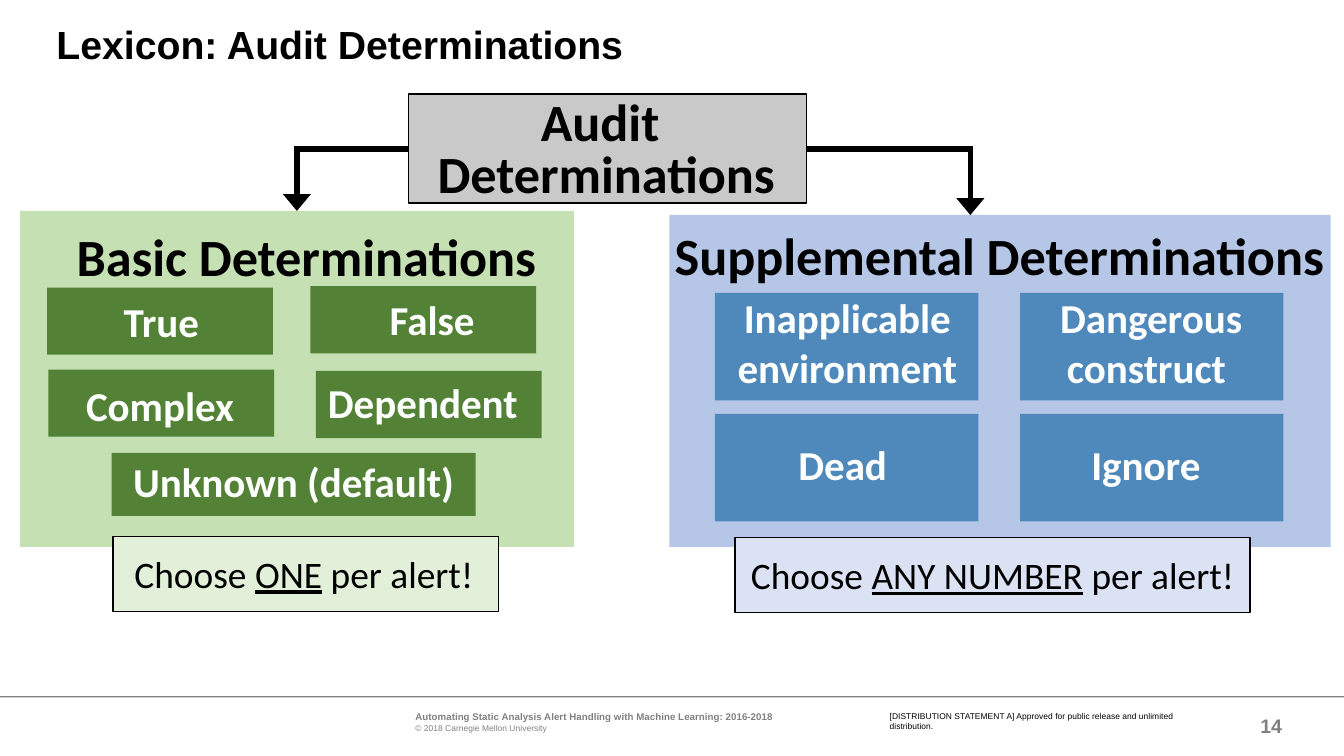
from lxml import etree
from pptx import Presentation
from pptx import util as u
from pptx.dml.color import RGBColor
from pptx.enum import shapes, text
from pptx.oxml.ns import qn

COLORS = {
    "black": "000000", "white": "FEFFFF", "gray": "808080", "root": "C9C9C9",
    "basic": "C5E0B3", "basic_tile": "538135", "basic_note": "E2EFD9",
    "extra": "B5C6E7", "extra_tile": "4F88BB", "extra_note": "DAE2F3",
}
LEFT = text.PP_ALIGN.LEFT
CENTER = text.PP_ALIGN.CENTER
HEADING = {"size": 28, "bold": True}
LABEL = {"size": 22, "bold": True, "color": "white"}
NOTE = {"size": 20}


def color(name):
    return RGBColor.from_string(COLORS[name])


def inches(box):
    return [u.Inches(value) for value in box]


def shift(box, left, top, width, height):
    return box[0] + left, box[1] + top, width, height


def style(font, size, color_name="black", name="Calibri", **values):
    values.update(size=u.Pt(size), name=name)
    for key, value in values.items():
        setattr(font, key, value)
    font.color.rgb = color(color_name)


def write(frame, paragraphs, look, **para_values):
    for index, spans in enumerate(paragraphs):
        para = frame.paragraphs[0] if index == 0 else frame.add_paragraph()
        for key, value in para_values.items():
            setattr(para, key, value)
        for words, changes in spans:
            values = {**look, **changes}
            color_name = values.pop("color", "black")
            for number, line in enumerate(words.split("\v")):
                if number:
                    para.add_line_break()
                span = para.add_run()
                span.text = line
                style(span.font, color_name=color_name, **values)


def plain(words):
    return [[(line, {})] for line in words.split("\n")]


def set_frame(frame, wrap=True, anchor=text.MSO_ANCHOR.TOP, grow=True):
    fit = text.MSO_AUTO_SIZE.SHAPE_TO_FIT_TEXT if grow else text.MSO_AUTO_SIZE.NONE
    values = {"margin_left": 0, "margin_top": 0, "margin_right": 0, "margin_bottom": 0,
              "word_wrap": wrap, "vertical_anchor": anchor, "auto_size": fit}
    for key, value in values.items():
        setattr(frame, key, value)


def add_text(page, box, paragraphs, look, wrap=True, **para_values):
    frame = page.shapes.add_textbox(*inches(box)).text_frame
    set_frame(frame, wrap)
    write(frame, paragraphs, look, **para_values)
    return frame


def add_block(page, box, fill, outlined=False):
    block = page.shapes.add_shape(shapes.MSO_SHAPE.RECTANGLE, *inches(box))
    block.shadow.inherit = False
    block.fill.solid()
    block.fill.fore_color.rgb = color(fill)
    if outlined:
        block.line.color.rgb = color("black")
        block.line.width = u.Pt(0.75)
    else:
        block.line.fill.background()


def add_arrow(page, *ends):
    arrow = page.shapes.add_connector(shapes.MSO_CONNECTOR.ELBOW, *inches(ends))
    arrow.line.color.rgb = color("black")
    arrow.line.width = u.Pt(3)
    properties = arrow._element.spPr
    properties.find(qn("a:prstGeom")).set("prst", "bentConnector2")
    outline = properties.find(qn("a:ln"))
    etree.SubElement(outline, qn("a:miter"), lim="800000")
    etree.SubElement(outline, qn("a:tailEnd"), type="triangle", w="lg", len="med")
    etree.SubElement(properties, qn("a:effectLst"))


def draw_title(page, box):
    title = page.shapes.title
    title.left, title.top, title.width, title.height = inches(box)
    set_frame(title.text_frame, grow=False)
    write(title.text_frame, plain("Lexicon: Audit Determinations"),
          {"size": 21, "bold": True, "name": "Arial"}, alignment=LEFT, line_spacing=0.9)


def draw_root(page, box):
    add_block(page, box, "root", outlined=True)
    add_text(page, shift(box, 0.17, 0.04, 2.6, 0.79), plain("Audit \vDeterminations"),
             HEADING, alignment=CENTER, line_spacing=u.Pt(28))


def draw_panel(page, box, theme, heading, heading_box, tiles, amount, note_box, note_text_box,
               note_alignment):
    add_block(page, box, theme)
    add_text(page, shift(box, *heading_box), plain(heading), HEADING, wrap=False)
    add_block(page, shift(box, *note_box), theme + "_note", outlined=True)
    spans = [("Choose ", {}), (amount, {"underline": True}), (" per alert!", {})]
    add_text(page, shift(box, *note_text_box), [spans], NOTE,
             wrap=note_alignment == CENTER, alignment=note_alignment)
    for words, tile_box, label_box in tiles:
        tile = shift(box, *tile_box)
        add_block(page, tile, theme + "_tile")
        add_text(page, shift(tile, *label_box), plain(words), LABEL, wrap=False,
                 alignment=CENTER if len(words.splitlines()) > 1 else LEFT)


def draw_basic(page, box):
    tiles = [
        ("True", (0.2, 0.57, 1.68, 0.5), (0.57, 0.07, 0.57, 0.37)),
        ("False", (2.16, 0.56, 1.68, 0.5), (0.59, 0.06, 0.64, 0.37)),
        ("Complex", (0.21, 1.18, 1.68, 0.5), (0.28, 0.08, 1.11, 0.37)),
        ("Dependent", (2.2, 1.19, 1.68, 0.5), (0.09, 0.05, 1.43, 0.37)),
        ("Unknown (default)", (0.68, 1.8, 2.71, 0.47), (0.16, 0.03, 2.41, 0.37)),
    ]
    draw_panel(page, box, "basic", "Basic Determinations", (0.42, 0.1, 3.46, 0.47), tiles,
               "ONE", (0.69, 2.42, 2.87, 0.56), (0.85, 2.53, 2.54, 0.34), LEFT)


def draw_supplemental(page, box):
    labels = [
        ("Inapplicable\nenvironment", (0.07, 0, 1.83, 0.74)),
        ("Dangerous\vconstruct ", (0.29, 0, 1.37, 0.74)),
        ("Dead", (0.62, 0.19, 0.67, 0.37)),
        ("Ignore", (0.53, 0.19, 0.82, 0.37)),
    ]
    tiles = [(words, (0.34 + 2.27 * (index % 2), 0.58 + 0.9 * (index // 2), 1.96, 0.8), label)
             for index, (words, label) in enumerate(labels)]
    draw_panel(page, box, "extra", "Supplemental Determinations", (0.04, 0.06, 4.89, 0.47),
               tiles, "ANY NUMBER", (0.49, 2.4, 3.83, 0.56), (0.49, 2.51, 3.83, 0.34), CENTER)


def draw_footer(page, box):
    add_block(page, shift(box, 0, 0, box[2], 0.01), "gray")
    small = {"size": 4.5, "name": "Arial"}
    credit = [
        [("Automating Static Analysis Alert Handling with Machine Learning: 2016-2018",
          {"size": 5.25, "bold": True})],
        [("© 2018 Carnegie Mellon University", {})],
    ]
    add_text(page, shift(box, 3.09, 0.11, 3.37, 0.16), credit, {**small, "color": "gray"})
    add_text(page, shift(box, 6.62, 0.11, 2.29, 0.15),
             plain("[DISTRIBUTION STATEMENT A] Approved for public release and unlimited "
                   "distribution."), small)
    number = add_text(page, shift(box, 9.1, 0.07, 0.44, 0.3), plain("14"),
                      {"size": 10.5, "bold": True, "name": "Arial", "color": "gray"},
                      alignment=text.PP_ALIGN.RIGHT)
    set_frame(number, anchor=text.MSO_ANCHOR.MIDDLE, grow=False)


def main():
    deck = Presentation()
    deck.slide_width, deck.slide_height = inches((10, 10 * 9 / 16))
    page = deck.slides.add_slide(deck.slide_layouts[5])
    draw_footer(page, (0, 5.18, 10, 0.44))
    draw_title(page, (0.42, 0.19, 8.33, 0.59))
    draw_basic(page, (0.15, 1.57, 4.12, 2.5))
    draw_supplemental(page, (4.98, 1.6, 4.92, 2.47))
    draw_root(page, (3.04, 0.7, 2.96, 0.81))
    add_arrow(page, 6, 1.11, 7.22, 1.6)
    add_arrow(page, 3.04, 1.11, 2.21, 1.57)
    deck.save("out.pptx")


if __name__ == "__main__":
    main()
